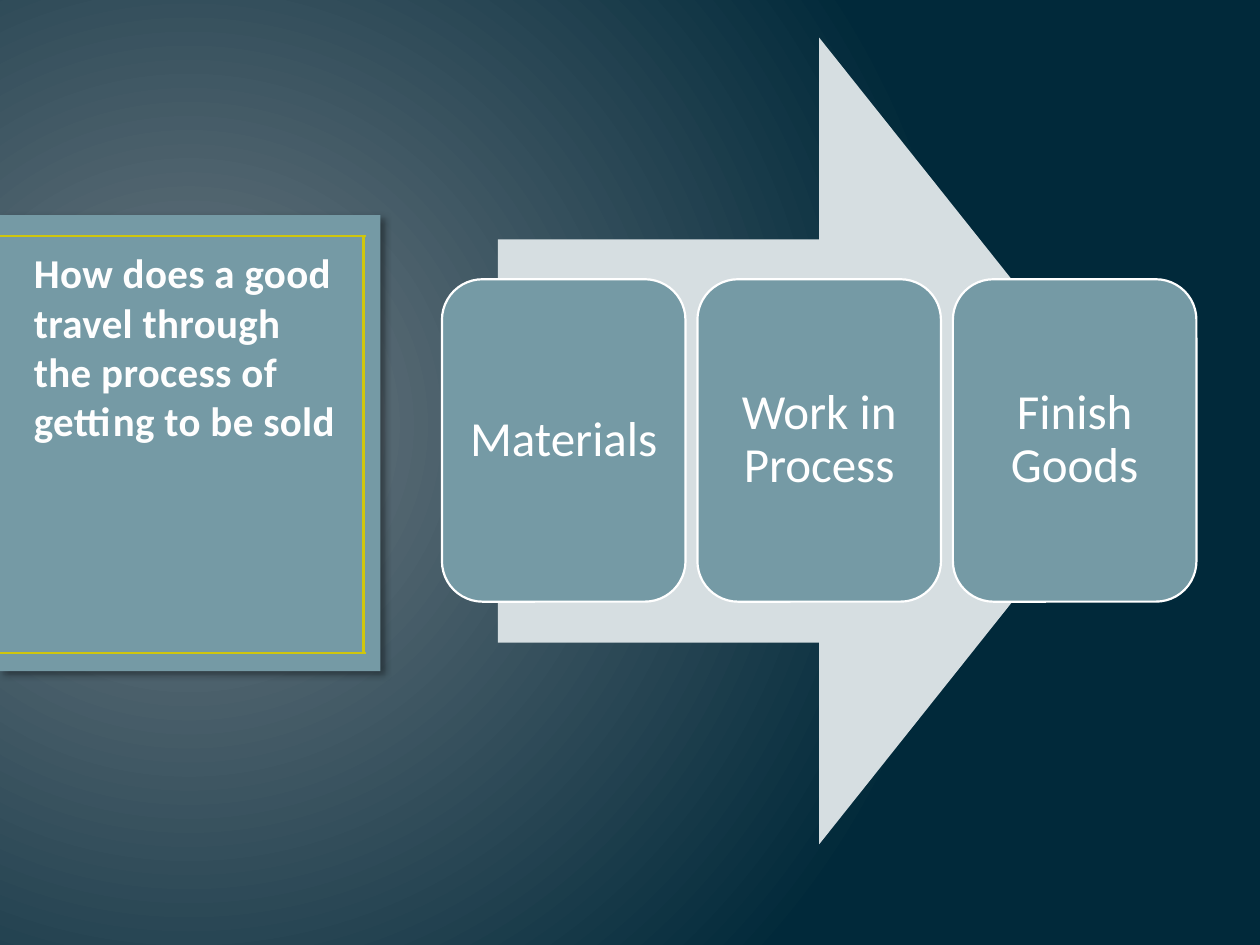
from lxml.etree import SubElement
from pptx import Presentation
from pptx.dml.color import RGBColor
from pptx.enum.shapes import MSO_CONNECTOR, MSO_SHAPE
from pptx.enum.text import MSO_ANCHOR, MSO_AUTO_SIZE, PP_ALIGN
from pptx.oxml import parse_xml
from pptx.oxml.ns import nsdecls, qn
from pptx.util import Cm, Pt

COLORS = {
    "glow": "717C84",
    "night": "01293A",
    "panel": "759AA5",
    "rule": "CFC60D",
    "arrow": "D6DEE1",
    "white": "FFFFFF",
    "title": "FEFEFE",
    "shadow": "000000",
}
FONT = "Calibri"
STAGES = ["Materials", "Work in Process", "Finish Goods"]


def rgb(name):
    return RGBColor.from_string(COLORS[name])


def set_background(s):
    """Radial glow on the left fading to dark blue."""
    fill = s.background.fill
    fill.gradient()
    grad = s._element.cSld.find(".//" + qn("a:gradFill"))
    grad.getparent().replace(grad, parse_xml(
        f'<a:gradFill {nsdecls("a")} rotWithShape="1"><a:gsLst>'
        f'<a:gs pos="0"><a:srgbClr val="{COLORS["glow"]}"/></a:gs>'
        f'<a:gs pos="100000"><a:srgbClr val="{COLORS["night"]}"/></a:gs>'
        '</a:gsLst><a:path path="circle">'
        '<a:fillToRect l="15000" t="50000" r="85000" b="60000"/>'
        '</a:path></a:gradFill>'))


def add_box(shapes, kind, x, y, w, h, fill, line=None):
    sp = shapes.add_shape(kind, Cm(x), Cm(y), Cm(w), Cm(h))
    sp.shadow.inherit = False
    sp.fill.solid()
    sp.fill.fore_color.rgb = rgb(fill)
    if line:
        sp.line.color.rgb = rgb(line)
        sp.line.width = Pt(1.25)
    else:
        sp.line.fill.background()
    return sp


def add_shadow(sp):
    effects = sp._element.spPr.find(qn("a:effectLst"))
    effects.append(parse_xml(
        f'<a:outerShdw {nsdecls("a")} blurRad="{Pt(4)}" dist="{Pt(3)}" '
        f'dir="2700000" algn="tl" rotWithShape="0">'
        f'<a:srgbClr val="{COLORS["shadow"]}"><a:alpha val="40000"/>'
        '</a:srgbClr></a:outerShdw>'))


def add_rule(s, x1, y1, x2, y2):
    line = s.shapes.add_connector(
        MSO_CONNECTOR.STRAIGHT, Cm(x1), Cm(y1), Cm(x2), Cm(y2))
    line.line.color.rgb = rgb("rule")
    line.line.width = Pt(1.5)
    SubElement(line._element.spPr, qn("a:effectLst"))


def set_text(sp, text, *, size, color, bold=False, align=PP_ALIGN.LEFT,
             anchor=MSO_ANCHOR.MIDDLE, line_spacing=1.0, inset=None,
             tracking=None):
    tf = sp.text_frame
    tf.word_wrap = True
    tf.auto_size = MSO_AUTO_SIZE.NONE
    tf.vertical_anchor = anchor
    if inset is not None:
        tf.margin_left = tf.margin_right = Cm(inset)
        tf.margin_top = tf.margin_bottom = Cm(inset)
    p = tf.paragraphs[0]
    p.alignment = align
    p.line_spacing = line_spacing
    r = p.add_run()
    r.text = text
    r.font.name = FONT
    r.font.size = Pt(size)
    r.font.bold = bold
    r.font.color.rgb = rgb(color)
    if tracking:
        r._r.get_or_add_rPr().set("spc", str(round(tracking * 100)))


def add_title_panel(s):
    panel = add_box(s.shapes, MSO_SHAPE.RECTANGLE,
                    0, 4.34, 7.67, 9.19, "panel")
    add_shadow(panel)

    # Yellow frame, open on the left
    top, bottom, right = 4.76, 13.16, 7.33
    add_rule(s, right, top, right, bottom)
    for y in (top, bottom):
        add_rule(s, 0, y, right + 0.04, y)

    # Title, raised above the panel
    title = s.shapes.title
    title.left, title.top = Cm(0.43), Cm(5.28)
    title.width, title.height = Cm(6.6), Cm(3.81)
    s.shapes._spTree.append(title._element)
    set_text(title,
             "How does a good travel through the process of getting to be sold",
             size=23.4, color="title", bold=True, anchor=MSO_ANCHOR.BOTTOM,
             tracking=0.2)


def add_process(s):
    shapes = s.shapes.add_group_shape().shapes
    add_box(shapes, MSO_SHAPE.RIGHT_ARROW, 10.04, 0.76, 12.95, 16.26, "arrow")

    # Equal stages across the arrow
    left, width, gap = 8.91, 4.91, 0.24
    for i, stage in enumerate(STAGES):
        sp = add_box(shapes, MSO_SHAPE.ROUNDED_RECTANGLE,
                     left + i * (width + gap), 5.63, width, 6.5,
                     "panel", line="white")
        set_text(sp, stage, size=28, color="white", align=PP_ALIGN.CENTER,
                 line_spacing=0.9, inset=0.3)


def main():
    prs = Presentation()
    prs.slide_width, prs.slide_height = Cm(25.4), Cm(19.05)
    s = prs.slides.add_slide(prs.slide_layouts[5])
    set_background(s)
    add_title_panel(s)
    add_process(s)
    prs.save("out.pptx")


if __name__ == "__main__":
    main()
